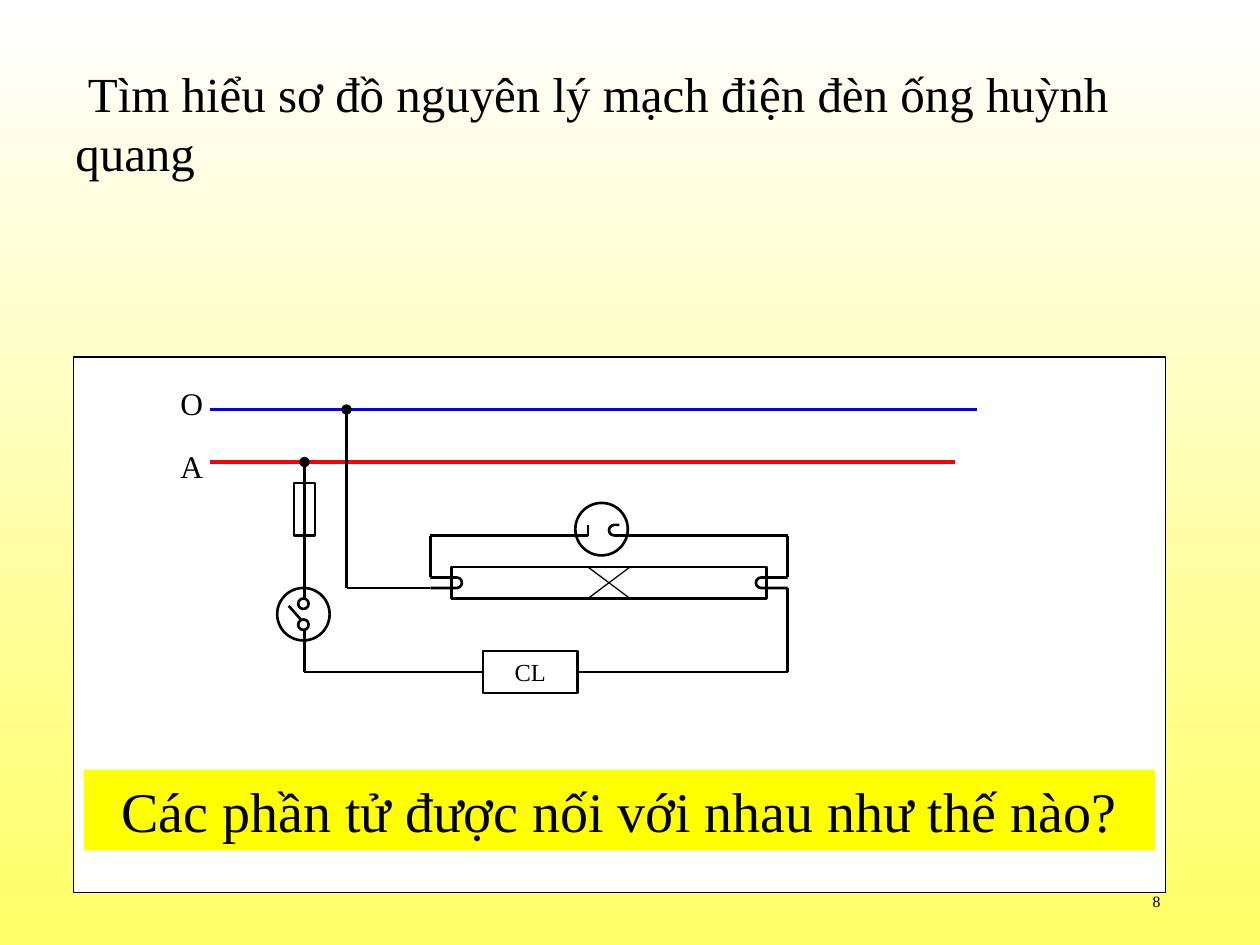
from dataclasses import dataclass
from typing import Optional, Union

from lxml.etree import SubElement
from pptx import Presentation
from pptx.dml.color import RGBColor
from pptx.enum.shapes import MSO_CONNECTOR as Link, MSO_SHAPE as Shape
from pptx.enum.text import MSO_ANCHOR as Anchor, PP_ALIGN as Align
from pptx.oxml.ns import qn
from pptx.util import Emu, Pt

EMU_PER_PX = 7620
FONT = "Times New Roman"
COLORS = {
    "ink": "000000",
    "paper": "FFFFFF",
    "glow": "FFFF66",
    "live": "FF0000",
    "neutral": "0000FF",
    "banner": "FFFF00",
}


@dataclass
class Wire:
    x1: int
    y1: int
    x2: int
    y2: int
    color: str = "ink"
    weight: float = 1.5
    node: bool = False


@dataclass
class Part:
    kind: Shape
    left: int
    top: int
    width: int
    height: int
    fill: Optional[str] = None
    weight: float = 1.5
    text: str = ""
    size: int = 14
    wrap: bool = False
    flip: bool = False


@dataclass
class Label:
    text: str
    left: int
    top: int
    width: int
    height: int
    size: int
    align: Align = Align.LEFT
    anchor: Anchor = Anchor.TOP
    indent: int = 0


def px(length: int) -> Emu:
    return Emu(length * EMU_PER_PX)


def rgb(name: str) -> RGBColor:
    return RGBColor.from_string(COLORS[name])


def write(frame, text: str, size: int, align: Align, anchor: Anchor, wrap: bool):
    frame.text = text
    frame.word_wrap = wrap
    frame.vertical_anchor = anchor
    para = frame.paragraphs[0]
    para.alignment = align
    for span in para.runs:
        span.font.name = FONT
        span.font.size = Pt(size)
        span.font.color.rgb = rgb("ink")
    return para


def draw_wire(page, wire: Wire) -> None:
    line = page.shapes.add_connector(
        Link.STRAIGHT, px(wire.x1), px(wire.y1), px(wire.x2), px(wire.y2)
    )
    line.line.color.rgb = rgb(wire.color)
    line.line.width = Pt(wire.weight)
    if wire.node:
        SubElement(line.line._get_or_add_ln(), qn("a:headEnd"), type="oval")
    SubElement(line._element.spPr, qn("a:effectLst"))


def draw_part(page, part: Part) -> None:
    shape = page.shapes.add_shape(
        part.kind, px(part.left), px(part.top), px(part.width), px(part.height)
    )
    shape.shadow.inherit = False
    if part.kind == Shape.ROUNDED_RECTANGLE:
        shape.adjustments[0] = 0.5
    if part.flip:
        shape._element.spPr.get_or_add_xfrm().set("flipH", "1")
    if part.fill:
        shape.fill.solid()
        shape.fill.fore_color.rgb = rgb(part.fill)
    else:
        shape.fill.background()
    if part.weight:
        shape.line.color.rgb = rgb("ink")
        shape.line.width = Pt(part.weight)
    else:
        shape.line.fill.background()
    if part.text:
        write(shape.text_frame, part.text, part.size, Align.CENTER, Anchor.MIDDLE, part.wrap)


def draw_label(page, label: Label) -> None:
    box = page.shapes.add_textbox(
        px(label.left), px(label.top), px(label.width), px(label.height)
    )
    para = write(box.text_frame, label.text, label.size, label.align, label.anchor, True)
    if label.indent:
        para._p.get_or_add_pPr().set("indent", str(px(label.indent)))


RECT, OVAL, PILL = Shape.RECTANGLE, Shape.OVAL, Shape.ROUNDED_RECTANGLE

CIRCUIT: list[Union[Wire, Part]] = [
    Part(RECT, 70, 340, 1040, 510, "paper", 0.75),
    Wire(200, 440, 910, 440, "live", 2.25),
    Wire(200, 390, 930, 390, "neutral", 2.25),
    Wire(290, 440, 290, 580, node=True),
    Wire(330, 390, 330, 560, node=True),
    Part(RECT, 280, 460, 20, 50),
    Part(OVAL, 264, 560, 50, 50),
    Wire(275, 577, 290, 594),
    *[Part(OVAL, 284, top, 10, 10, "paper") for top in (570, 590)],
    Wire(290, 600, 290, 640),
    Part(RECT, 430, 540, 300, 30, "paper"),
    Part(PILL, 390, 550, 50, 10),
    Part(RECT, 380, 530, 30, 50, "paper", 0),
    Part(PILL, 720, 550, 50, 10, flip=True),
    Part(RECT, 750, 530, 30, 50, "paper", 0),
    *[Wire(x, 550, x, 510) for x in (410, 750)],
    Wire(290, 640, 750, 640),
    Part(RECT, 460, 620, 90, 40, "paper", text="CL"),
    Wire(750, 560, 750, 640),
    Wire(330, 560, 410, 560),
    Wire(410, 510, 560, 510),
    Part(PILL, 580, 500, 30, 10, flip=True),
    Part(RECT, 590, 490, 30, 30, "paper", 0),
    Wire(560, 500, 560, 510),
    Part(OVAL, 548, 479, 50, 50),
    Wire(560, 540, 600, 570, weight=0.75),
    Wire(560, 570, 600, 540, weight=0.75),
    Wire(590, 510, 750, 510),
    Part(RECT, 80, 733, 1020, 77, "banner", 0,
         "Các phần tử được nối với nhau như thế nào?", 32, True),
]

LABELS = [
    Label("Tìm hiểu sơ đồ nguyên lý mạch điện đèn ống huỳnh quang",
          60, 55, 1080, 125, 28, indent=12),
    Label("A", 160, 420, 40, 48, 18),
    Label("O", 160, 360, 60, 48, 18),
    Label("8", 847, 834, 270, 48, 9, Align.RIGHT, Anchor.MIDDLE),
]


def main() -> None:
    deck = Presentation()
    deck.slide_width, deck.slide_height = px(1200), px(900)
    page = deck.slides.add_slide(deck.slide_layouts[6])

    backdrop = page.background.fill
    backdrop.gradient()
    backdrop.gradient_angle = 270
    for stop, name, position in zip(backdrop.gradient_stops, ("paper", "glow"), (0, 1)):
        stop.color.rgb = rgb(name)
        stop.position = position

    for item in CIRCUIT:
        if isinstance(item, Wire):
            draw_wire(page, item)
        else:
            draw_part(page, item)
    for label in LABELS:
        draw_label(page, label)
    deck.save("out.pptx")


if __name__ == "__main__":
    main()
